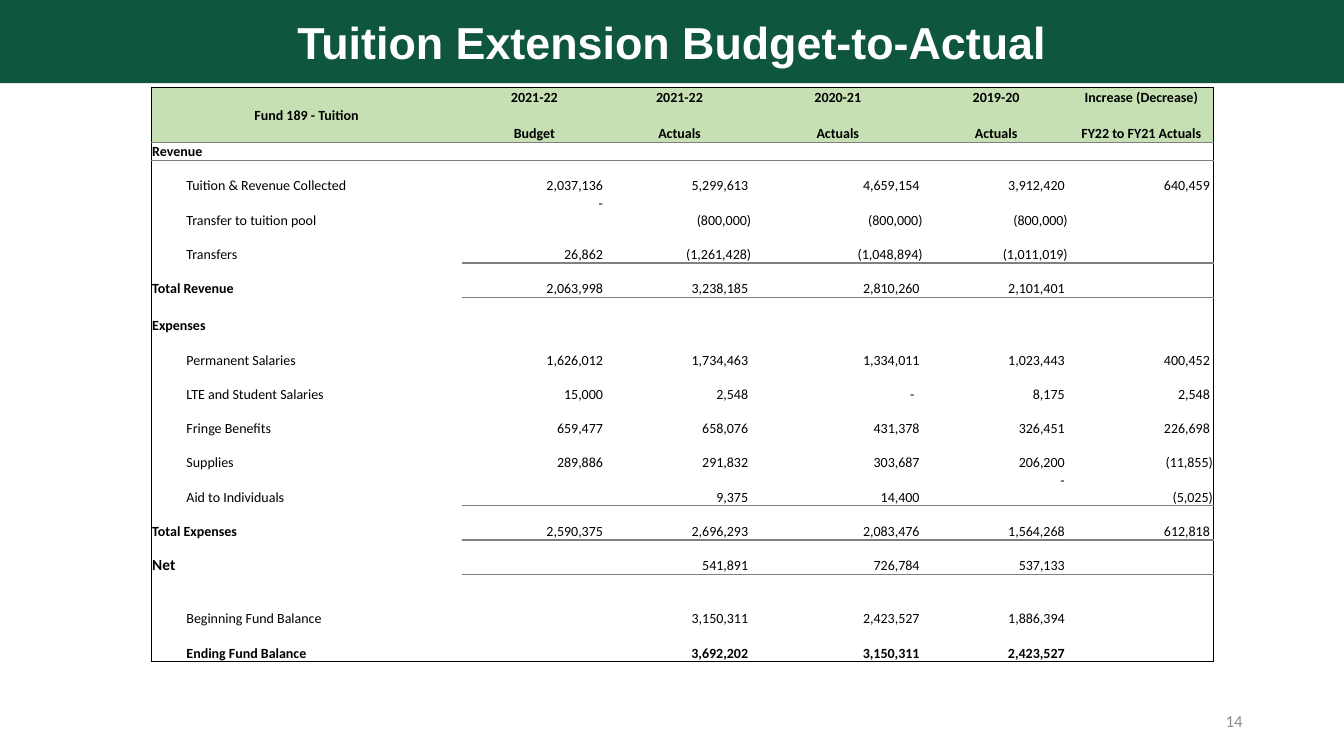
"""Build the tuition extension budget-to-actual slide."""
from lxml.etree import SubElement as Sub
from pptx import Presentation as Deck
from pptx.dml.color import RGBColor as Rgb
from pptx.enum.text import MSO_ANCHOR as Anchor, MSO_AUTO_SIZE as Auto, PP_ALIGN as Align
from pptx.oxml.ns import qn
from pptx.util import Inches, Pt

GREEN = Rgb(0x0F, 0x56, 0x40)
LIME = Rgb(0xC6, 0xE0, 0xB4)
WHITE = Rgb(255, 255, 255)
BLACK = Rgb(0, 0, 0)
GRAY = Rgb(0x80, 0x80, 0x80)
PALE = Rgb(0x8C, 0x8C, 0x8C)

WIDE, HIGH = Inches(13.33), Inches(7.5)
COLS = [0.34, 2.74, 1.44, 1.44, 1.7, 1.44, 1.44]
LINE, GAP, ROW = 0.18, 0.19, 0.34
NO_GRID = "{2D5ABB26-0587-4C30-8999-92F81FD0307C}"

HEAD, GROUP, ITEM, TOTAL, NET, END, BLANK = range(7)
ROWS = [
    (HEAD, LINE, "Fund 189 - Tuition", "2021-22", "2021-22", "2020-21", "2019-20", "Increase (Decrease)"),
    (HEAD, 0.36, "", "Budget", "Actuals", "Actuals", "Actuals", "FY22 to FY21 Actuals"),
    (GROUP, LINE, "Revenue"),
    (ITEM, ROW, "Tuition & Revenue Collected", "2,037,136", "5,299,613", "4,659,154", "3,912,420", "640,459"),
    (ITEM, ROW, "Transfer to tuition pool", "^-", "(800,000)", "(800,000)", "(800,000)"),
    (ITEM, ROW, "Transfers", "26,862", "(1,261,428)", "(1,048,894)", "(1,011,019)"),
    (TOTAL, ROW, "Total Revenue", "2,063,998", "3,238,185", "2,810,260", "2,101,401"),
    (BLANK, GAP, ""),
    (GROUP, LINE, "Expenses"),
    (ITEM, ROW, "Permanent Salaries", "1,626,012", "1,734,463", "1,334,011", "1,023,443", "400,452"),
    (ITEM, ROW, "LTE and Student Salaries", "15,000", "2,548", "-", "8,175", "2,548"),
    (ITEM, ROW, "Fringe Benefits", "659,477", "658,076", "431,378", "326,451", "226,698"),
    (ITEM, ROW, "Supplies", "289,886", "291,832", "303,687", "206,200", "(11,855)"),
    (ITEM, ROW, "Aid to Individuals", "", "9,375", "14,400", "^-", "(5,025)"),
    (TOTAL, ROW, "Total Expenses", "2,590,375", "2,696,293", "2,083,476", "1,564,268", "612,818"),
    (NET, ROW, "Net", "", "541,891", "726,784", "537,133"),
    (BLANK, GAP, ""),
    (ITEM, ROW, "Beginning Fund Balance", "", "3,150,311", "2,423,527", "1,886,394"),
    (END, ROW, "Ending Fund Balance", "", "3,692,202", "3,150,311", "2,423,527"),
]
RULES = {"Transfers", "Aid to Individuals", "Total Expenses"}


def write(frame, text, size, color, align, bold=False, face="Calibri"):
    """Put one styled run in a text frame."""
    para = frame.paragraphs[0]
    para.alignment = align
    if not text:
        Sub(para._p, qn("a:endParaRPr"), sz=str(size * 100))
        return
    run = para.add_run()
    run.text = text
    font = run.font
    font.name, font.size, font.bold = face, Pt(size), bold
    font.color.rgb = color


def place(shape, left, top, width, height):
    """Set a shape's box in shares of the slide."""
    shape.left, shape.width = int(left * WIDE), int(width * WIDE)
    shape.top, shape.height = int(top * HIGH), int(height * HIGH)


def edge(cell, side, color):
    """Draw one border of a cell."""
    line = Sub(cell._tc.get_or_add_tcPr(), qn("a:ln" + side), w=str(Pt(1)))
    Sub(Sub(line, qn("a:solidFill")), qn("a:srgbClr"), val=str(color))


def ruled(row, col):
    """Tell whether a gray rule runs below a cell."""
    return row == 1 or (col > 1 and ROWS[row][2] in RULES)


def frame_cell(cell, row, col):
    """Draw the table's outline and gray rules at a cell."""
    if col == 0:
        edge(cell, "L", BLACK)
    if col == len(COLS) - 1:
        edge(cell, "R", BLACK)
    if row == 0:
        edge(cell, "T", BLACK)
    elif ruled(row - 1, col):
        edge(cell, "T", GRAY)
    if row == len(ROWS) - 1:
        edge(cell, "B", BLACK)
    elif ruled(row, col) or (row == 0 and col < 2):
        edge(cell, "B", GRAY)


def fill_cell(cell, kind, col, text):
    """Format and fill a cell by its row kind and column."""
    high = text.startswith("^")
    cell.margin_left = cell.margin_top = cell.margin_right = Inches(0.01)
    cell.margin_bottom = 0
    cell.vertical_anchor = Anchor.TOP if high else Anchor.BOTTOM
    align, bold = Align.LEFT, kind != ITEM
    if kind == HEAD:
        align = Align.CENTER
        cell.fill.solid()
        cell.fill.fore_color.rgb = LIME
        if col < 2:
            cell.vertical_anchor = Anchor.MIDDLE
    else:
        cell.fill.background()
        if col > 1:
            align, bold = Align.RIGHT, kind == END
            if not text.endswith(")"):
                cell.margin_right = Inches(0.09 if text == "-" else 0.04)
    size = 11 if kind == NET and col == 0 else 10
    write(cell.text_frame, text.lstrip("^"), size, BLACK, align, bold)


def add_fund(slide):
    """Add the fund table."""
    heights = [row[1] for row in ROWS]
    shape = slide.shapes.add_table(len(ROWS), len(COLS), Inches(1.5), Inches(0.87),
                                   Inches(sum(COLS)), Inches(sum(heights)))
    table = shape.table
    table._tbl.tblPr.find(qn("a:tableStyleId")).text = NO_GRID
    table.first_row = table.horz_banding = False
    for col, width in zip(table.columns, COLS):
        col.width = Inches(width)
    for r, (kind, height, label, *values) in enumerate(ROWS):
        table.rows[r].height = Inches(height)
        lead = ["", label] if kind in (ITEM, END) else [label, ""]
        texts = lead + values + [""] * (5 - len(values))
        for c, text in enumerate(texts):
            cell = table.cell(r, c)
            frame_cell(cell, r, c)
            fill_cell(cell, kind, c, text)
        if kind in (GROUP, TOTAL):
            table.cell(r, 0).merge(table.cell(r, 1))
    table.cell(0, 0).merge(table.cell(1, 1))


def add_title(slide):
    """Turn the title placeholder into the green banner."""
    title = slide.shapes.title
    place(title, 0, 0, 1, 0.11)
    title.fill.solid()
    title.fill.fore_color.rgb = GREEN
    frame = title.text_frame
    frame.auto_size, frame.vertical_anchor = Auto.NONE, Anchor.MIDDLE
    write(frame, "Tuition Extension Budget-to-Actual", 32, WHITE, Align.CENTER, True, "Arial")


def add_page(slide):
    """Add the page number."""
    box = slide.shapes.add_textbox(0, 0, 0, 0)
    place(box, 0.707, 0.927, 0.225, 0.053)
    frame = box.text_frame
    frame.word_wrap, frame.vertical_anchor = True, Anchor.MIDDLE
    write(frame, "14", 12, PALE, Align.RIGHT)


def main():
    """Build and save the slide."""
    deck = Deck()
    deck.slide_width, deck.slide_height = WIDE, HIGH
    slide = deck.slides.add_slide(deck.slide_layouts[5])
    add_fund(slide)
    add_title(slide)
    add_page(slide)
    deck.save("out.pptx")


if __name__ == "__main__":
    main()
